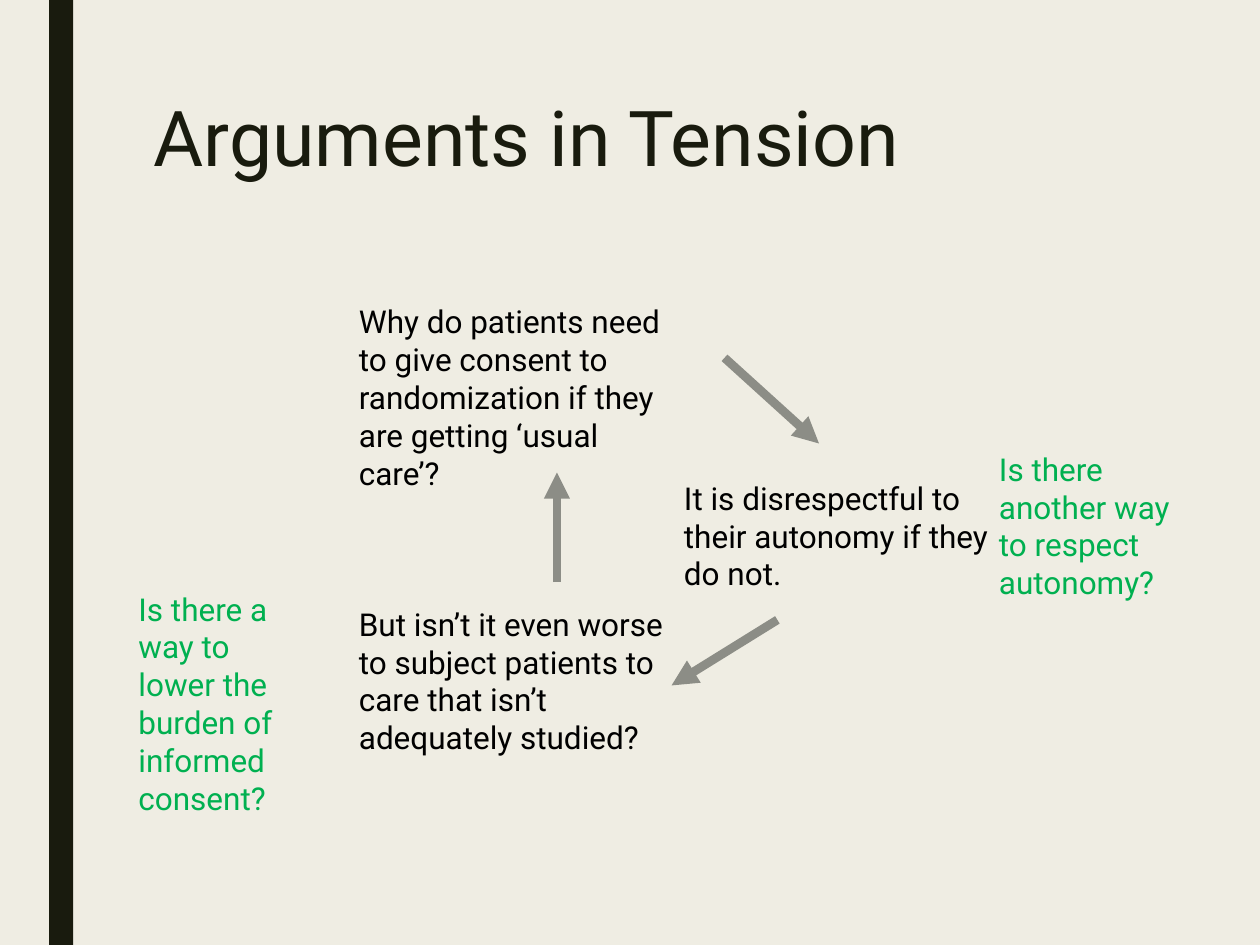
from dataclasses import dataclass

from lxml.etree import SubElement
from pptx import Presentation
from pptx.dml.color import RGBColor
from pptx.enum.shapes import MSO_CONNECTOR, MSO_SHAPE
from pptx.enum.text import MSO_ANCHOR, PP_ALIGN
from pptx.oxml.ns import qn
from pptx.util import Inches, Pt


@dataclass(frozen=True)
class Theme:
    font: str = "Roboto"
    background: RGBColor = RGBColor(0xEF, 0xED, 0xE3)
    dark: RGBColor = RGBColor(0x19, 0x1B, 0x0E)
    argument: RGBColor = RGBColor(0, 0, 0)
    question: RGBColor = RGBColor(0x00, 0xB0, 0x50)
    arrow: RGBColor = RGBColor(0x8C, 0x8D, 0x86)
    title_size: Pt = Pt(44)
    body_size: Pt = Pt(18)
    arrow_width: Pt = Pt(5)


@dataclass(frozen=True)
class Note:
    text: str
    left: float
    top: float
    width: float
    height: float
    color: RGBColor


@dataclass(frozen=True)
class Arrow:
    start: tuple[float, float]
    end: tuple[float, float]


THEME = Theme()
ARGUMENT_WIDTH = 2.75
QUESTION_WIDTH = 1.58

NOTES = [
    Note("Why do patients need to give consent to randomization if they are getting ‘usual care’?",
         2.75, 2.35, ARGUMENT_WIDTH, 1.31, THEME.argument),
    Note("It is disrespectful to their autonomy if they do not.",
         5.33, 3.75, ARGUMENT_WIDTH, 0.71, THEME.argument),
    Note("But isn’t it even worse to subject patients to care that isn’t adequately studied?",
         2.75, 4.75, ARGUMENT_WIDTH, 1.31, THEME.argument),
    Note("Is there another way to respect autonomy?",
         7.83, 3.52, QUESTION_WIDTH, 1.31, THEME.question),
    Note("Is there a way to lower the burden of informed consent?",
         1, 4.63, QUESTION_WIDTH, 1.62, THEME.question),
]

ARROWS = [
    Arrow((5.75, 2.84), (6.5, 3.52)),
    Arrow((6.17, 4.92), (5.33, 5.44)),
    Arrow((4.42, 4.62), (4.42, 3.75)),
]


def set_font(p, size: Pt, color: RGBColor) -> None:
    p.font.name = THEME.font
    p.font.size = size
    p.font.color.rgb = color


def add_side_bar(slide) -> None:
    sp = slide.shapes.add_shape(MSO_SHAPE.RECTANGLE, Inches(0.39), 0, Inches(0.19), Inches(7.5))
    sp.shadow.inherit = False
    sp.fill.solid()
    sp.fill.fore_color.rgb = THEME.dark
    sp.line.fill.background()


def set_title(slide, text: str) -> None:
    sp = slide.shapes.title
    sp.left, sp.top, sp.width, sp.height = map(Inches, (1.12, 0.75, 7.88, 1.62))
    tf = sp.text_frame
    tf.text = text
    tf.vertical_anchor = MSO_ANCHOR.TOP
    p = tf.paragraphs[0]
    p.alignment = PP_ALIGN.LEFT
    p.line_spacing = 0.89
    set_font(p, THEME.title_size, THEME.dark)


def add_note(slide, note: Note) -> None:
    box = map(Inches, (note.left, note.top, note.width, note.height))
    tf = slide.shapes.add_textbox(*box).text_frame
    tf.word_wrap = True
    tf.text = note.text
    set_font(tf.paragraphs[0], THEME.body_size, note.color)


def add_arrow(slide, arrow: Arrow) -> None:
    ends = map(Inches, (*arrow.start, *arrow.end))
    cxn = slide.shapes.add_connector(MSO_CONNECTOR.STRAIGHT, *ends)
    cxn.line.color.rgb = THEME.arrow
    cxn.line.width = THEME.arrow_width
    SubElement(cxn.line._get_or_add_ln(), qn("a:tailEnd"), type="triangle")
    SubElement(cxn._element.spPr, qn("a:effectLst"))


def main() -> None:
    prs = Presentation()
    prs.slide_width, prs.slide_height = Inches(10), Inches(7.5)
    slide = prs.slides.add_slide(prs.slide_layouts[5])
    slide.background.fill.solid()
    slide.background.fill.fore_color.rgb = THEME.background

    add_side_bar(slide)
    set_title(slide, "Arguments in Tension")
    for note in NOTES:
        add_note(slide, note)
    for arrow in ARROWS:
        add_arrow(slide, arrow)
    prs.save("out.pptx")


if __name__ == "__main__":
    main()
